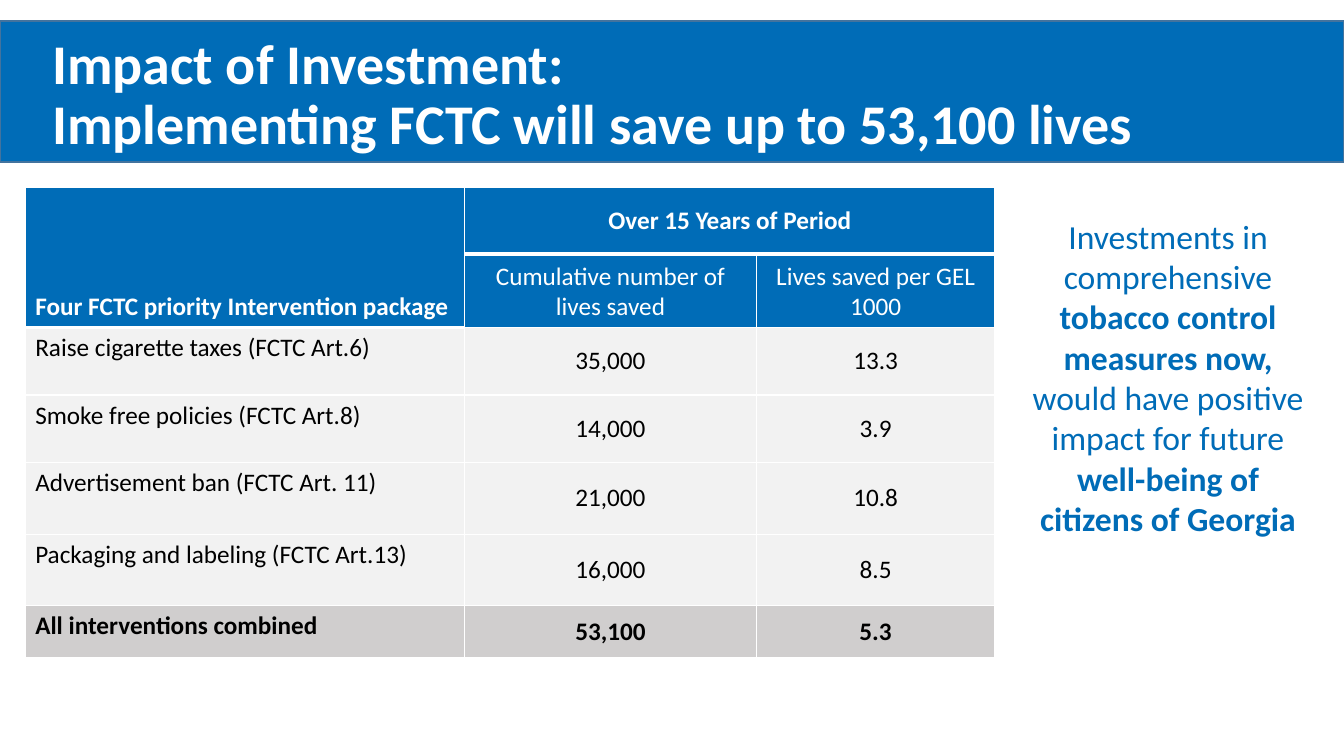
from lxml import etree
from pptx import Presentation
from pptx.dml.color import RGBColor
from pptx.enum.shapes import MSO_SHAPE
from pptx.enum.text import MSO_ANCHOR, PP_ALIGN
from pptx.oxml.ns import qn
from pptx.util import Inches, Pt

RECTANGLE = MSO_SHAPE.RECTANGLE
LEFT, CENTER = PP_ALIGN.LEFT, PP_ALIGN.CENTER
TOP, MIDDLE, BOTTOM = MSO_ANCHOR.TOP, MSO_ANCHOR.MIDDLE, MSO_ANCHOR.BOTTOM

FONT = "Calibri"
COLORS = {
    "blue": "006CB7",
    "band_line": "43739E",
    "white": "FFFFFF",
    "black": "000000",
    "row": "F2F2F2",
    "total": "D0CECE",
}
TITLE_LINES = ["Impact of Investment:", "Implementing FCTC will save up to 53,100 lives"]
TABLE_ROWS = [
    ("Four FCTC priority Intervention package", "Over 15 Years of Period", ""),
    ("", "Cumulative number of lives saved", "Lives saved per GEL 1000"),
    ("Raise cigarette taxes (FCTC Art.6)", "35,000", "13.3"),
    ("Smoke free policies (FCTC Art.8)", "14,000", "3.9"),
    ("Advertisement ban (FCTC Art. 11)", "21,000", "10.8"),
    ("Packaging and labeling (FCTC Art.13)", "16,000", "8.5"),
    ("All interventions combined", "53,100", "5.3"),
]
COLUMN_WIDTHS = [4.36, 2.89, 2.37]
ROW_HEIGHTS = [0.66, 0.73, 0.67, 0.67, 0.71, 0.71, 0.52]
HEADER_ROWS = 2
THICK_BOTTOMS = {(0, 0), (1, 0), (0, 1), (0, 2)}
CALLOUT_RUNS = [
    ("Investments in comprehensive ", False),
    ("tobacco control measures now, ", True),
    ("would have positive impact for future ", False),
    ("well-being of citizens of Georgia", True),
]


def color(name):
    return RGBColor.from_string(COLORS[name])


def add_run(paragraph, text, size, color_name, bold):
    run = paragraph.add_run()
    run.text = text
    run.font.name = FONT
    run.font.size = Pt(size)
    run.font.bold = bold
    run.font.color.rgb = color(color_name)


def add_box(slide, left, top, width, height, fill, line):
    shape = slide.shapes.add_shape(
        RECTANGLE, Inches(left), Inches(top), Inches(width), Inches(height)
    )
    shape.shadow.inherit = False
    shape.fill.solid()
    shape.fill.fore_color.rgb = color(fill)
    shape.line.color.rgb = color(line)
    shape.line.width = Pt(1)
    return shape


def set_borders(cell, bottom_width):
    properties = cell._tc.get_or_add_tcPr()
    sides = [("a:lnL", 1), ("a:lnR", 1), ("a:lnT", 1), ("a:lnB", bottom_width)]
    for position, (tag, width) in enumerate(sides):
        line = etree.Element(qn(tag), w=str(Pt(width)))
        fill = etree.SubElement(line, qn("a:solidFill"))
        etree.SubElement(fill, qn("a:srgbClr"), val=COLORS["white"])
        properties.insert(position, line)


def add_title(slide):
    title = slide.shapes.title
    title.left, title.top = Inches(0.42), Inches(0.23)
    title.width, title.height = Inches(12.34), Inches(1.45)
    title.text_frame.vertical_anchor = MIDDLE
    title.text_frame.word_wrap = True
    paragraph = title.text_frame.paragraphs[0]
    paragraph.alignment = LEFT
    paragraph.line_spacing = 0.9
    for index, text in enumerate(TITLE_LINES):
        if index:
            paragraph.add_line_break()
        add_run(paragraph, text, 40, "white", True)


def add_lives_table(slide):
    table = slide.shapes.add_table(
        len(TABLE_ROWS), len(COLUMN_WIDTHS), Inches(0.25), Inches(1.86),
        Inches(sum(COLUMN_WIDTHS)), Inches(sum(ROW_HEIGHTS)),
    ).table
    table.horz_banding = False
    for column, width in zip(table.columns, COLUMN_WIDTHS):
        column.width = Inches(width)
    for row, height in zip(table.rows, ROW_HEIGHTS):
        row.height = Inches(height)
    table.cell(0, 0).merge(table.cell(1, 0))
    table.cell(0, 1).merge(table.cell(0, 2))

    total_row = len(TABLE_ROWS) - 1
    for row_index, texts in enumerate(TABLE_ROWS):
        header = row_index < HEADER_ROWS
        total = row_index == total_row
        fill = "blue" if header else "total" if total else "row"
        for column_index, text in enumerate(texts):
            cell = table.cell(row_index, column_index)
            cell.fill.solid()
            cell.fill.fore_color.rgb = color(fill)
            set_borders(cell, 3 if (row_index, column_index) in THICK_BOTTOMS else 1)
            if not text:
                continue
            first_column = column_index == 0
            if header:
                cell.vertical_anchor = MIDDLE if text == TABLE_ROWS[0][1] else BOTTOM
            else:
                cell.vertical_anchor = TOP if first_column else MIDDLE
            paragraph = cell.text_frame.paragraphs[0]
            paragraph.alignment = LEFT if first_column else CENTER
            add_run(paragraph, text, 18, "white" if header else "black",
                    row_index in (0, total_row))


def add_callout(slide):
    callout = add_box(slide, 10.07, 2.09, 3.03, 3.67, "white", "white")
    callout.text_frame.word_wrap = True
    callout.text_frame.vertical_anchor = TOP
    paragraph = callout.text_frame.paragraphs[0]
    paragraph.alignment = CENTER
    for text, bold in CALLOUT_RUNS:
        add_run(paragraph, text, 24, "blue", bold)


def main():
    presentation = Presentation()
    presentation.slide_width = Inches(13.33)
    presentation.slide_height = Inches(7.5)
    slide = presentation.slides.add_slide(presentation.slide_layouts[5])
    band = add_box(slide, 0, 0.21, 13.33, 1.4, "blue", "band_line")
    slide.shapes.title._element.addprevious(band._element)
    add_title(slide)
    add_lives_table(slide)
    add_callout(slide)
    presentation.save("out.pptx")


if __name__ == "__main__":
    main()
